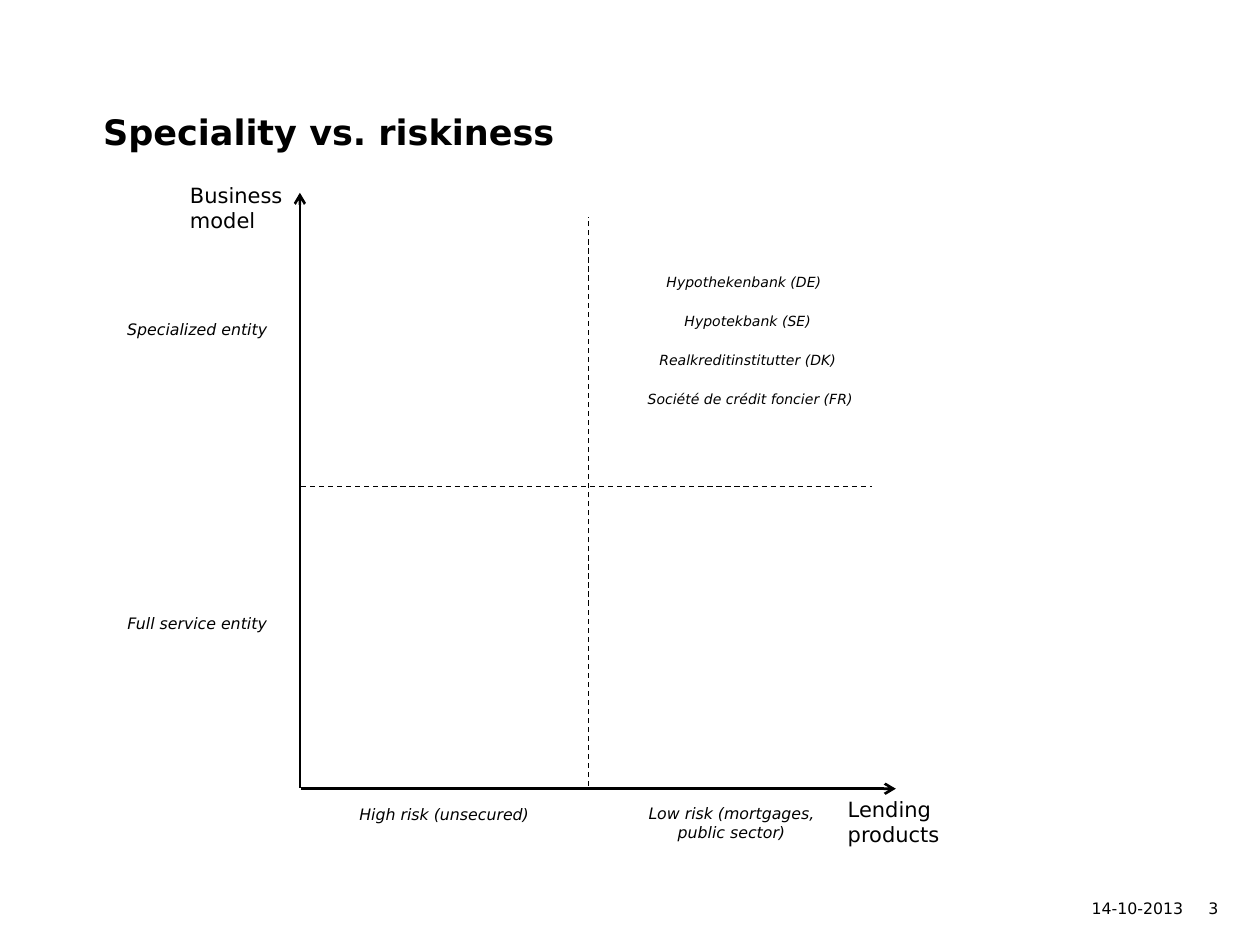
from dataclasses import dataclass

from lxml import etree
from pptx import Presentation
from pptx.dml.color import RGBColor
from pptx.enum import dml, shapes, text
from pptx.oxml.ns import qn
from pptx.util import Inches, Pt

COLORS = {"ink": "000000", "paper": "FFFFFF"}
FONT = "DejaVu Sans"
LEFT, CENTER, RIGHT = text.PP_ALIGN.LEFT, text.PP_ALIGN.CENTER, text.PP_ALIGN.RIGHT


@dataclass
class Label:
    wording: str
    left: float
    top: float
    width: float
    height: float
    size: float
    align: text.PP_ALIGN = LEFT
    bold: bool = False
    italic: bool = False
    middle: bool = False
    inset: bool = True


@dataclass
class Rule:
    start: tuple[float, float]
    end: tuple[float, float]
    is_axis: bool


def color(name: str) -> RGBColor:
    return RGBColor.from_string(COLORS[name])


def note(wording: str, left: float, top: float, width: float = 1.63,
         height: float = 0.25, size: float = 9) -> Label:
    """Centred italic label used inside and beside the quadrants."""
    return Label(wording, left, top, width, height, size, CENTER, italic=True)


def draw_label(slide, label: Label) -> None:
    box = slide.shapes.add_textbox(Inches(label.left), Inches(label.top),
                                   Inches(label.width), Inches(label.height))
    frame = box.text_frame
    frame.word_wrap = True
    if label.middle:
        frame.vertical_anchor = text.MSO_ANCHOR.MIDDLE
    if not label.inset:
        frame.margin_left = frame.margin_right = 0
        frame.margin_top = frame.margin_bottom = 0
    para = frame.paragraphs[0]
    para.text = label.wording
    para.alignment = label.align
    font = para.font
    font.name, font.size = FONT, Pt(label.size)
    font.bold, font.italic = label.bold, label.italic
    font.color.rgb = color("ink")


def draw_rule(slide, rule: Rule) -> None:
    """Axes are solid with an arrowhead; dividers are thin and dashed."""
    points = [Inches(value) for value in (*rule.start, *rule.end)]
    connector = slide.shapes.add_connector(shapes.MSO_CONNECTOR.STRAIGHT, *points)
    line = connector.line
    line.color.rgb = color("ink")
    line.width = Pt(1.5 if rule.is_axis else 0.75)
    if rule.is_axis:
        etree.SubElement(line._get_or_add_ln(), qn("a:tailEnd"), type="arrow")
    else:
        line.dash_style = dml.MSO_LINE.DASH
    etree.SubElement(connector._element.spPr, qn("a:effectLst"))


RULES = [
    Rule((2.38, 6.25), (2.38, 1.53), True),
    Rule((2.39, 6.26), (7.11, 6.26), True),
    Rule((4.67, 6.24), (4.67, 1.72), False),
    Rule((2.39, 3.86), (6.92, 3.86), False),
]

LABELS = [
    Label("Speciality vs. riskiness", 0.72, 0.7, 8.83, 0.69, 20, bold=True, middle=True),
    Label("14-10-2013", 8.52, 7.09, 0.87, 0.24, 9, RIGHT, middle=True, inset=False),
    Label("3", 9.42, 7.09, 0.25, 0.24, 9, RIGHT, middle=True, inset=False),
    Label("Business model", 1.41, 1.4, 1.13, 0.5, 12),
    Label("Lending products", 6.63, 6.27, 1.13, 0.5, 12),
    note("Low risk (mortgages, public sector)", 4.99, 6.33, height=0.4),
    note("High risk (unsecured)", 2.71, 6.34),
    note("Specialized entity", 0.75, 2.49),
    note("Full service entity", 0.75, 4.82),
]

# Lender types in the specialized, low-risk quadrant: wording, left, width
LENDERS = [
    ("Hypothekenbank (DE)", 5.09, 1.63),
    ("Hypotekbank (SE)", 5.12, 1.63),
    ("Realkreditinstitutter (DK)", 5.12, 1.63),
    ("Société de crédit foncier (FR)", 4.9, 2.11),
]
LENDER_TOP, LENDER_STEP = 2.12, 0.31


def main() -> None:
    deck = Presentation()
    deck.slide_width, deck.slide_height = Inches(10), Inches(7.5)
    slide = deck.slides.add_slide(deck.slide_layouts[6])
    slide.background.fill.solid()
    slide.background.fill.fore_color.rgb = color("paper")
    for rule in RULES:
        draw_rule(slide, rule)
    for label in LABELS:
        draw_label(slide, label)
    for row, (wording, left, width) in enumerate(LENDERS):
        top = LENDER_TOP + row * LENDER_STEP
        draw_label(slide, note(wording, left, top, width, 0.24, 8))
    deck.save("out.pptx")


if __name__ == "__main__":
    main()
